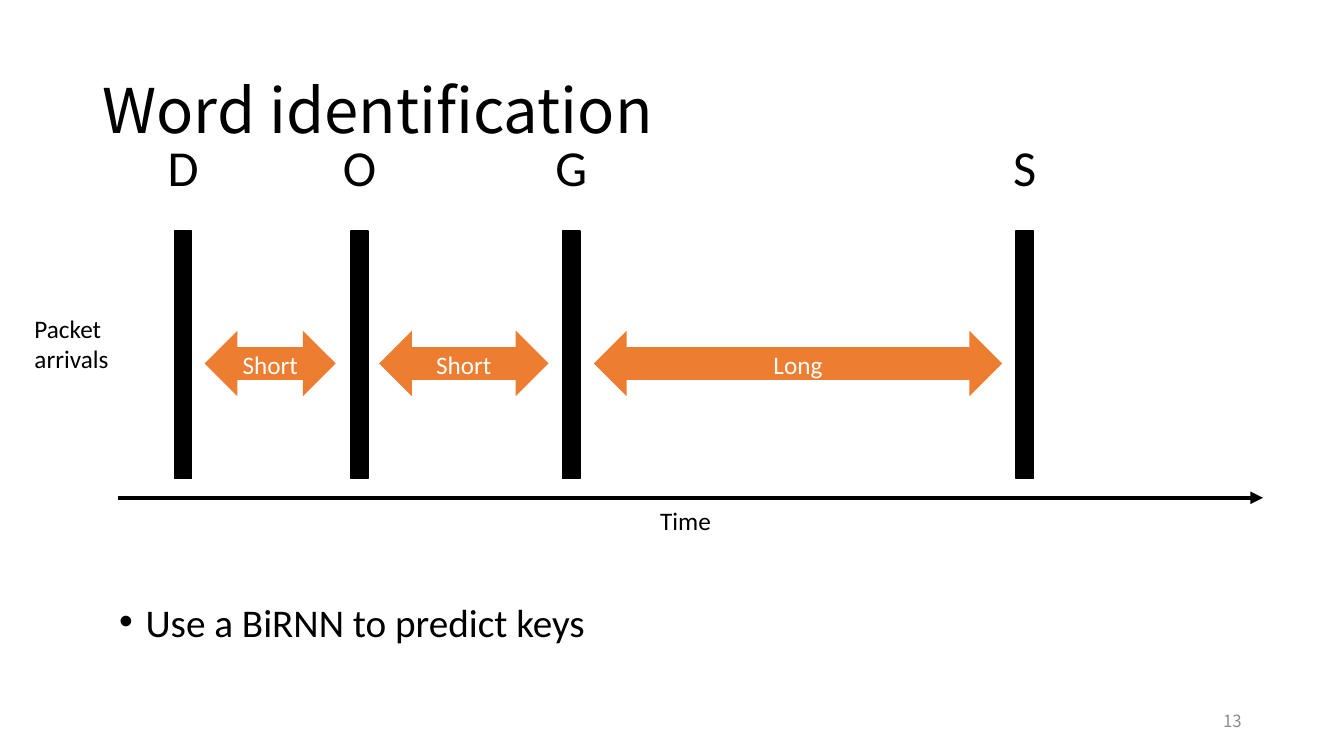
from dataclasses import dataclass

from lxml.etree import SubElement
from pptx import Presentation
from pptx.dml.color import RGBColor
from pptx.enum.shapes import MSO_CONNECTOR, MSO_SHAPE
from pptx.enum.text import MSO_ANCHOR as Anchor, PP_ALIGN as Align
from pptx.oxml.ns import qn
from pptx.util import Pt

BLACK, WHITE, ORANGE, GRAY = "000000", "FFFFFF", "ED7D31", "8C8C8C"
BODY_FONT, HEADING_FONT = "Calibri", "Noto Sans CJK SC"
BAR_TOP, BAR_WIDTH, BAR_HEIGHT = 165, 12.4, 177
LETTER_TOP, LETTER_WIDTH, LETTER_HEIGHT = 97.4, 40, 46
ARROW_TOP, ARROW_HEIGHT = 236.2, 46.8
AXIS_LEFT, AXIS_RIGHT, AXIS_Y = 84.2, 902.2, 355.6


@dataclass
class Packet:
    letter: str
    left: float


@dataclass
class Interval:
    label: str
    left: float
    width: float


@dataclass
class Label:
    text: str
    left: float
    top: float
    width: float
    height: float
    size: float
    font: str = BODY_FONT
    color: str = BLACK
    align: Align = Align.LEFT
    anchor: Anchor = Anchor.TOP
    inset: float = 0
    spacing: float = 1.0


PACKETS = [Packet("D", 124.6), Packet("O", 250.6), Packet("G", 401.8), Packet("S", 725.8)]
INTERVALS = [
    Interval("Short", 146.2, 93.6),
    Interval("Short", 270.8, 121),
    Interval("Long", 424.2, 291.6),
]
TITLE = Label("Word identification", 66.2, 28.8, 828, 104.4, 44, HEADING_FONT,
              anchor=Anchor.MIDDLE, inset=7.2, spacing=0.9)
PACKET_ARRIVALS = Label("Packet\narrivals", 24.6, 224, 74, 44, 18)
TIME = Label("Time", 471.6, 361, 50, 24, 18)
SUMMARY = Label("Use a BiRNN to predict keys", 85, 427, 420, 40, 28)
PAGE_NUMBER = Label("13", 678, 500.4, 216, 28.8, 12, HEADING_FONT, GRAY,
                    Align.RIGHT, Anchor.MIDDLE, 7.2)


def rgb(color: str) -> RGBColor:
    return RGBColor.from_string(color)


def write_text(shape, label: Label) -> None:
    frame = shape.text_frame
    frame.word_wrap = True
    frame.vertical_anchor = label.anchor
    frame.margin_left = frame.margin_right = Pt(label.inset)
    frame.margin_top = frame.margin_bottom = Pt(label.inset / 2)
    frame.text = label.text
    for paragraph in frame.paragraphs:
        paragraph.alignment = label.align
        paragraph.line_spacing = label.spacing
        paragraph.font.size = Pt(label.size)
        paragraph.font.name = label.font
        paragraph.font.color.rgb = rgb(label.color)


def add_label(slide, label: Label):
    box = slide.shapes.add_textbox(Pt(label.left), Pt(label.top), Pt(label.width), Pt(label.height))
    write_text(box, label)
    return box


def add_filled_shape(slide, kind: MSO_SHAPE, left: float, top: float,
                     width: float, height: float, color: str):
    shape = slide.shapes.add_shape(kind, Pt(left), Pt(top), Pt(width), Pt(height))
    shape.shadow.inherit = False
    shape.fill.solid()
    shape.fill.fore_color.rgb = rgb(color)
    shape.line.fill.background()
    return shape


def add_packet(slide, packet: Packet) -> None:
    """Draw a packet's bar with its letter centred above."""
    bar = add_filled_shape(slide, MSO_SHAPE.RECTANGLE, packet.left, BAR_TOP,
                           BAR_WIDTH, BAR_HEIGHT, BLACK)
    bar.line.color.rgb = rgb(BLACK)
    bar.line.width = Pt(1)
    letter_left = packet.left + (BAR_WIDTH - LETTER_WIDTH) / 2
    add_label(slide, Label(packet.letter, letter_left, LETTER_TOP, LETTER_WIDTH,
                           LETTER_HEIGHT, 36, align=Align.CENTER))


def add_interval(slide, interval: Interval) -> None:
    box = (interval.left, ARROW_TOP, interval.width, ARROW_HEIGHT)
    arrow = add_filled_shape(slide, MSO_SHAPE.LEFT_RIGHT_ARROW, *box, ORANGE)
    write_text(arrow, Label(interval.label, *box, 18, color=WHITE, align=Align.CENTER,
                            anchor=Anchor.MIDDLE, spacing=1.07))


def add_time_axis(slide) -> None:
    axis = slide.shapes.add_connector(MSO_CONNECTOR.STRAIGHT, Pt(AXIS_LEFT), Pt(AXIS_Y),
                                      Pt(AXIS_RIGHT), Pt(AXIS_Y))
    axis.line.color.rgb = rgb(BLACK)
    axis.line.width = Pt(3)
    properties = axis.element.spPr
    SubElement(properties.find(qn("a:ln")), qn("a:tailEnd"), type="triangle")
    SubElement(properties, qn("a:effectLst"))


def add_bullet(paragraph, indent: float) -> None:
    properties = paragraph._p.get_or_add_pPr()
    properties.set("marL", str(Pt(indent)))
    properties.set("indent", str(-Pt(indent)))
    SubElement(properties, qn("a:buFont"), typeface="Arial")
    SubElement(properties, qn("a:buChar"), char="•")
    # The schema wants the default run properties after the bullet.
    properties.append(properties.find(qn("a:defRPr")))


def main() -> None:
    presentation = Presentation()
    presentation.slide_width, presentation.slide_height = Pt(960), Pt(540)
    blank_layout = presentation.slide_layouts[6]
    slide = presentation.slides.add_slide(blank_layout)

    for label in (TITLE, PACKET_ARRIVALS, TIME, PAGE_NUMBER):
        add_label(slide, label)
    for packet in PACKETS:
        add_packet(slide, packet)
    for interval in INTERVALS:
        add_interval(slide, interval)
    add_time_axis(slide)
    summary = add_label(slide, SUMMARY)
    add_bullet(summary.text_frame.paragraphs[0], 19)

    presentation.save("out.pptx")


if __name__ == "__main__":
    main()
